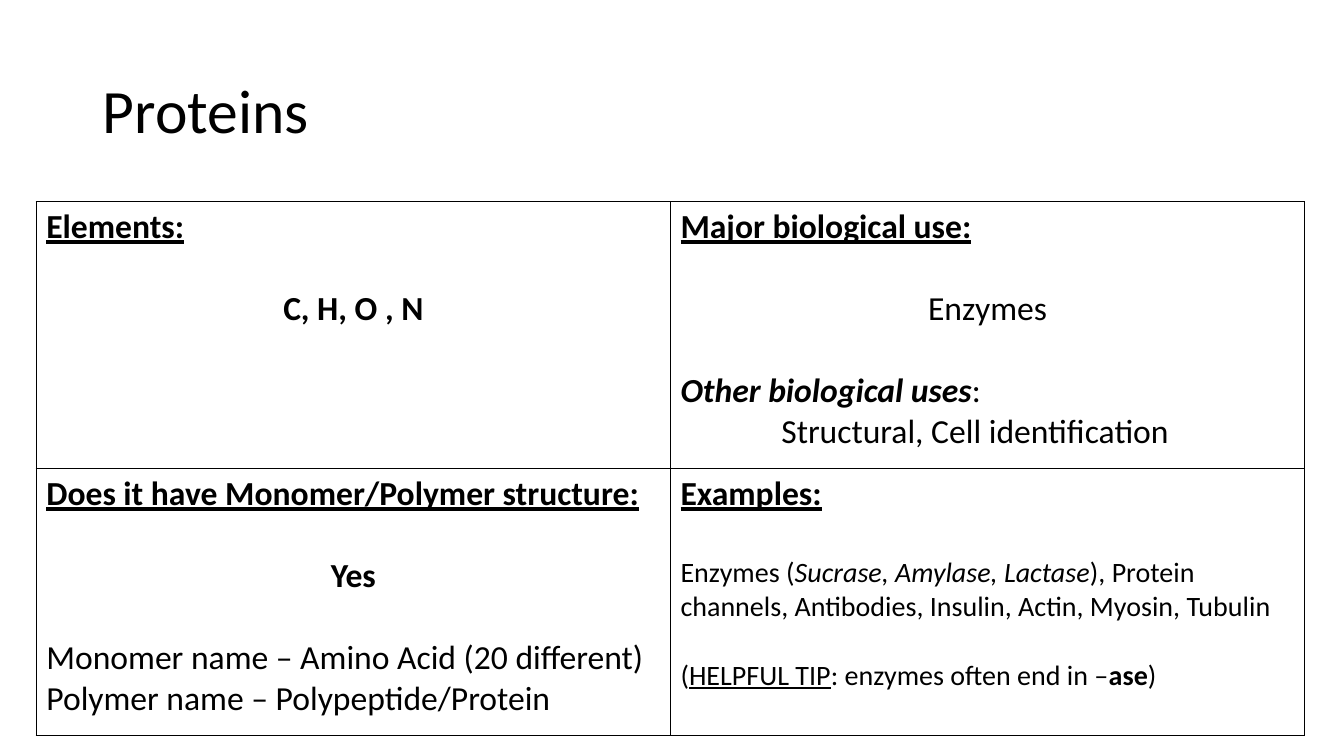
"""Build the Proteins summary slide."""
from dataclasses import dataclass

from lxml import etree
from pptx import Presentation
from pptx import util as u
from pptx.dml.color import RGBColor
from pptx.enum import text
from pptx.oxml import ns

COLOURS = {"ink": "000000"}
FONT = "Calibri"
LINE_GAP = 29.3
SMALL_GAP = 24.4


@dataclass(frozen=True)
class Span:
    """Words that share one style."""
    words: str
    bold: bool = False
    italic: bool = False
    underline: bool = False


@dataclass(frozen=True)
class Para:
    """A paragraph of a table cell."""
    spans: tuple[Span, ...]
    size: int = 24
    gap: float = 0
    centred: bool = False
    indent: float = 0


def heading(words: str) -> Para:
    """Return the underlined heading of a cell."""
    return Para((Span(words, bold=True, underline=True),))


def answer(words: str, bold: bool) -> Para:
    """Return a centred answer one line below the heading."""
    return Para((Span(words, bold=bold),), gap=LINE_GAP, centred=True)


ELEMENTS = (heading("Elements:"), answer("C, H, O , N", True))
USES = (
    heading("Major biological use:"),
    answer("Enzymes", False),
    Para((Span("Other biological uses", bold=True, italic=True), Span(":")), gap=LINE_GAP),
    Para((Span("Structural, Cell identification"),), indent=1),
)
STRUCTURE = (
    heading("Does it have Monomer/Polymer structure:"),
    answer("Yes", True),
    Para((Span("Monomer name – Amino Acid (20 different)"),), gap=LINE_GAP),
    Para((Span("Polymer name – Polypeptide/Protein"),)),
)
EXAMPLES = (
    heading("Examples:"),
    Para((
        Span("Enzymes ("),
        Span("Sucrase, Amylase, Lactase", italic=True),
        Span("), Protein channels, Antibodies, Insulin, Actin, Myosin, Tubulin"),
    ), size=20, gap=LINE_GAP),
    Para((
        Span("("),
        Span("HELPFUL TIP", underline=True),
        Span(": enzymes often end in –"),
        Span("ase", bold=True),
        Span(")"),
    ), size=20, gap=SMALL_GAP),
)
GRID = ((ELEMENTS, USES), (STRUCTURE, EXAMPLES))


def style_font(font, size: int) -> None:
    """Apply the slide's typeface and ink."""
    font.name = FONT
    font.size = u.Pt(size)
    font.color.rgb = RGBColor.from_string(COLOURS["ink"])


def write_paragraph(paragraph, para: Para) -> None:
    """Write one paragraph with its spans."""
    paragraph.alignment = text.PP_ALIGN.CENTER if para.centred else text.PP_ALIGN.LEFT
    paragraph.space_before = u.Pt(para.gap)
    if para.indent:
        paragraph._p.get_or_add_pPr().set("marL", str(u.Inches(para.indent)))
    for span in para.spans:
        run = paragraph.add_run()
        run.text = span.words
        style_font(run.font, para.size)
        run.font.bold = span.bold
        run.font.italic = span.italic
        run.font.underline = span.underline


def draw_borders(cell) -> None:
    """Give a cell a thin line on all four sides."""
    properties = cell._tc.get_or_add_tcPr()
    for side in ("lnL", "lnR", "lnT", "lnB"):
        line = etree.SubElement(properties, ns.qn(f"a:{side}"), w=str(u.Pt(1)))
        fill = etree.SubElement(line, ns.qn("a:solidFill"))
        etree.SubElement(fill, ns.qn("a:srgbClr"), val=COLOURS["ink"])


def fill_cell(cell, paras: tuple[Para, ...]) -> None:
    """Draw the borders and write the text of a cell."""
    draw_borders(cell)
    cell.fill.background()
    frame = cell.text_frame
    for index, para in enumerate(paras):
        paragraph = frame.add_paragraph() if index else frame.paragraphs[0]
        write_paragraph(paragraph, para)


def write_title(box) -> None:
    """Place and format the title."""
    box.left, box.top = u.Inches(0.92), u.Inches(0.4)
    box.width, box.height = u.Inches(11.5), u.Inches(1.45)
    frame = box.text_frame
    frame.text = "Proteins"
    frame.auto_size = text.MSO_AUTO_SIZE.NONE
    frame.vertical_anchor = text.MSO_ANCHOR.MIDDLE
    paragraph = frame.paragraphs[0]
    paragraph.alignment = text.PP_ALIGN.LEFT
    paragraph.line_spacing = 0.9
    style_font(paragraph.runs[0].font, 44)


def draw_table(page) -> None:
    """Draw the two by two summary table."""
    table = page.shapes.add_table(
        len(GRID), len(GRID[0]), u.Inches(0.36), u.Inches(2), u.Inches(12.58), u.Inches(5.3)
    ).table
    table.first_row = False
    table.horz_banding = False
    for row, contents in enumerate(GRID):
        for column, paras in enumerate(contents):
            fill_cell(table.cell(row, column), paras)


def main() -> None:
    """Build and save the deck."""
    deck = Presentation()
    deck.slide_width, deck.slide_height = u.Inches(13.33), u.Inches(7.5)
    page = deck.slides.add_slide(deck.slide_layouts.get_by_name("Title Only"))
    write_title(page.shapes.title)
    draw_table(page)
    deck.save("out.pptx")


if __name__ == "__main__":
    main()
